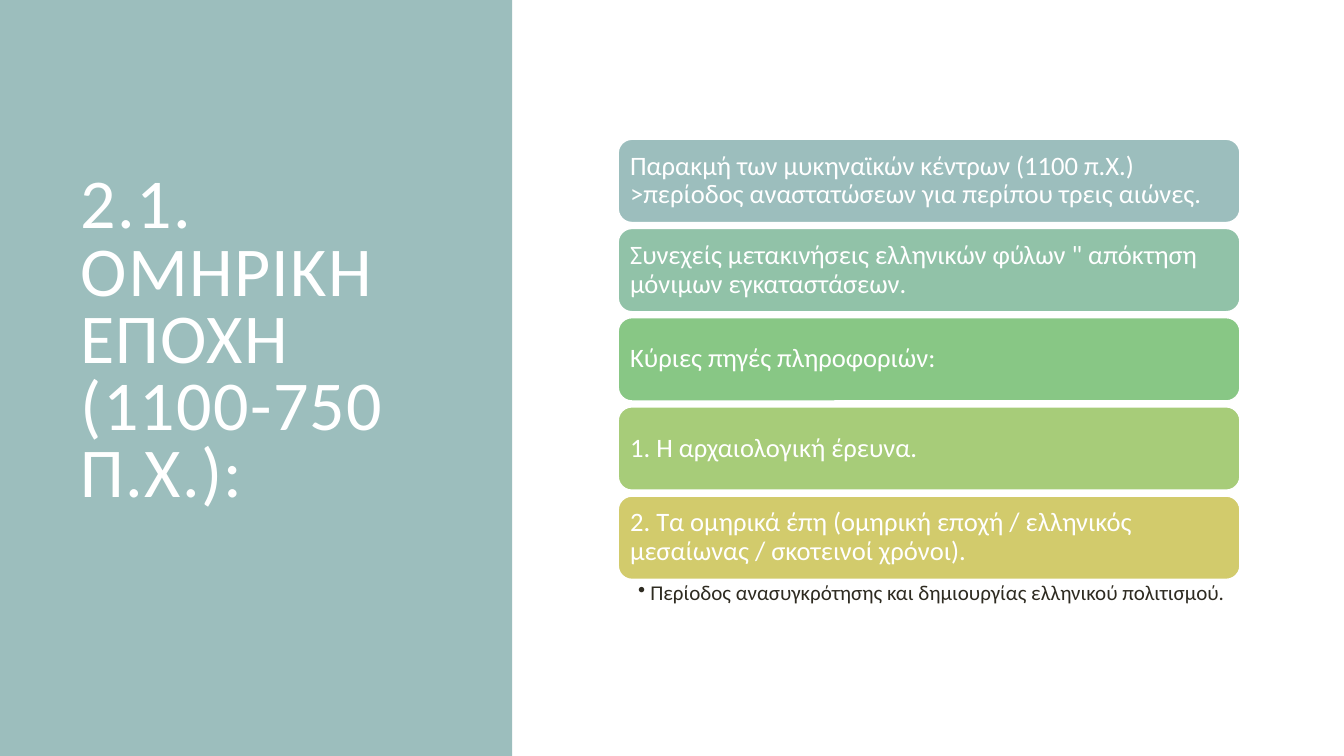
from lxml import etree
from pptx import Presentation
from pptx.dml.color import RGBColor
from pptx.enum.shapes import MSO_SHAPE
from pptx.enum.text import MSO_ANCHOR, PP_ALIGN
from pptx.oxml.ns import qn
from pptx.util import Inches, Pt

RECT = MSO_SHAPE.RECTANGLE
ROUNDED = MSO_SHAPE.ROUNDED_RECTANGLE
MIDDLE, TOP = MSO_ANCHOR.MIDDLE, MSO_ANCHOR.TOP
LEFT = PP_ALIGN.LEFT
FONT = "Calibri"

COLORS = {
    "white": "FFFFFF", "ink": "2E2B21", "teal": "9CBEBD", "sea": "91C2A8",
    "green": "88C785", "lime": "A7CC79", "mustard": "D2CB6C",
}

TITLE = "2.1. ΟΜΗΡΙΚΗ ΕΠΟΧΗ (1100-750 Π.Χ.):"
BARS = [
    ("teal", "Παρακμή των μυκηναϊκών κέντρων (1100 π.Χ.) >περίοδος αναστατώσεων για περίπου τρεις αιώνες."),
    ("sea", "Συνεχείς μετακινήσεις ελληνικών φύλων \" απόκτηση μόνιμων εγκαταστάσεων."),
    ("green", "Κύριες πηγές πληροφοριών:"),
    ("lime", "1. Η αρχαιολογική έρευνα."),
    ("mustard", "2. Τα ομηρικά έπη (ομηρική εποχή / ελληνικός μεσαίωνας / σκοτεινοί χρόνοι)."),
]
NOTE = "Περίοδος ανασυγκρότησης και δημιουργίας ελληνικού πολιτισμού."


def rgb(name):
    return RGBColor.from_string(COLORS[name])


def add_block(slide, kind, x, y, w, h, fill, line=None):
    sp = slide.shapes.add_shape(kind, Inches(x), Inches(y), Inches(w), Inches(h))
    sp.shadow.inherit = False
    sp.fill.solid()
    sp.fill.fore_color.rgb = rgb(fill)
    if line:
        sp.line.color.rgb = rgb(line)
        sp.line.width = Pt(1.25)
    else:
        sp.line.fill.background()
    return sp


def add_textbox(slide, x, y, w, h):
    return slide.shapes.add_textbox(Inches(x), Inches(y), Inches(w), Inches(h))


def write(sp, text, size, color, spacing, insets, anchor=MIDDLE):
    """Fill a shape with one left-aligned paragraph; insets: left, top, right, bottom."""
    tf = sp.text_frame
    tf.word_wrap = True
    tf.vertical_anchor = anchor
    tf.margin_left, tf.margin_top, tf.margin_right, tf.margin_bottom = map(Inches, insets)
    p = tf.paragraphs[0]
    p.text = text
    p.alignment = LEFT
    p.line_spacing = spacing
    p.font.name = FONT
    p.font.size = Pt(size)
    p.font.color.rgb = rgb(color)
    return p


def add_bullet(p, indent):
    pPr = p._p.get_or_add_pPr()
    pPr.set("marL", str(Inches(indent)))
    pPr.set("indent", str(-Inches(indent)))
    bullet = etree.Element(qn("a:buChar"), char="•")
    pPr.find(qn("a:defRPr")).addprevious(bullet)


def title_panel(slide, x, y, w, h):
    add_block(slide, RECT, x, y, w, h, "teal")
    sp = add_textbox(slide, x + 0.7, y + 0.7, w - 1.34, h - 1.41)
    # The deep bottom inset lifts the title above the panel's centre
    p = write(sp, TITLE, 50, "white", 0.8, (0.1, 0.05, 0.1, 0.73))
    p.runs[0].font._element.set("spc", "100")


def bar_list(slide, x, y, w, h):
    bar_h, note_h = 0.83, 0.34
    pitch = (h - note_h - bar_h) / (len(BARS) - 1)
    for i, (fill, text) in enumerate(BARS):
        sp = add_block(slide, ROUNDED, x, y + i * pitch, w, bar_h, fill, "white")
        write(sp, text, 19, "white", 0.9, (0.08,) * 4)

    # Bulleted note under the last bar
    sp = add_textbox(slide, x, y + h - note_h, w, note_h)
    p = write(sp, NOTE, 15, "ink", 0.9, (0.2, 0.03, 0.15, 0.03), TOP)
    add_bullet(p, 0.12)


def main():
    prs = Presentation()
    prs.slide_width, prs.slide_height = Inches(13.33), Inches(7.5)
    slide = prs.slides.add_slide(prs.slide_layouts[6])
    title_panel(slide, 0, 0, 5.08, 7.5)
    bar_list(slide, 6.13, 1.38, 6.17, 4.71)
    prs.save("out.pptx")


if __name__ == "__main__":
    main()
